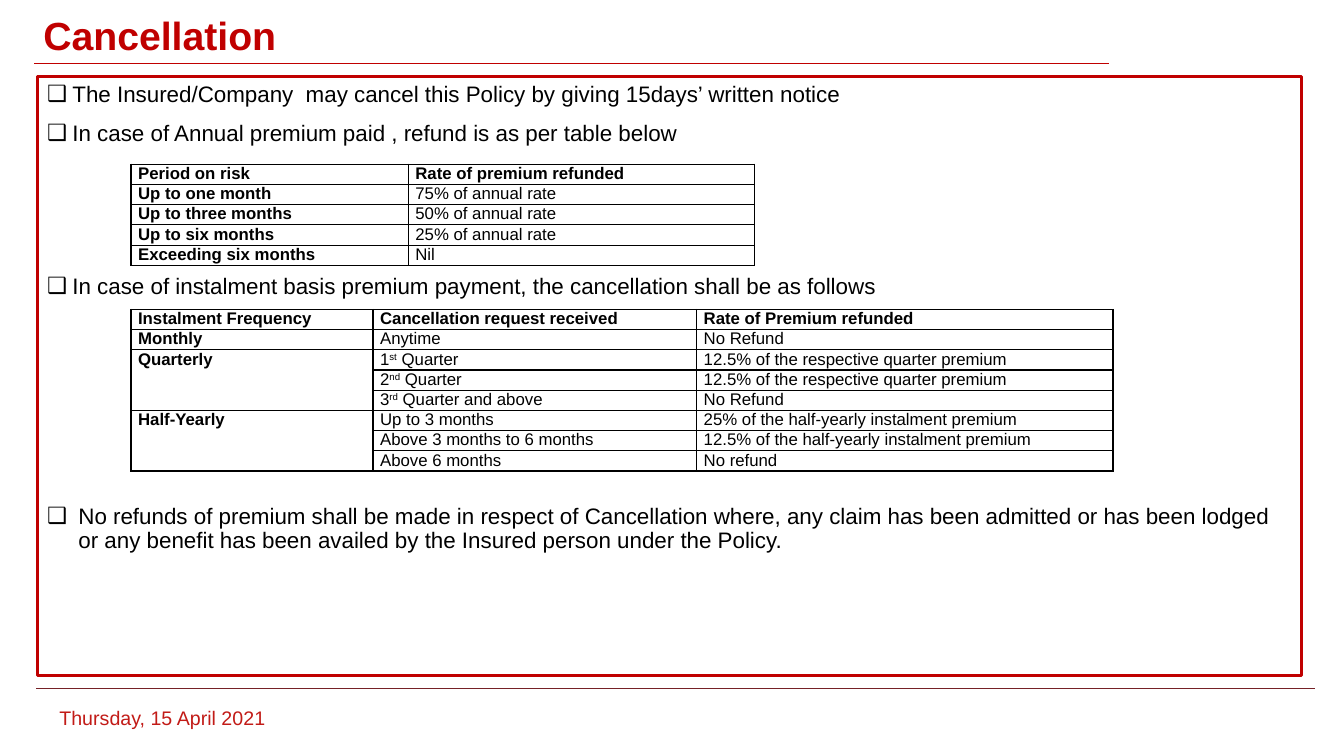
from lxml import etree
from pptx import Presentation
from pptx.dml.color import RGBColor
from pptx.enum import shapes, text
from pptx.oxml import ns
from pptx.util import Inches, Pt

RED = RGBColor(0xC0, 0x00, 0x00)
MAROON = RGBColor(0x75, 0x21, 0x27)
DATE = RGBColor(0xC2, 0x1B, 0x17)
BLACK = RGBColor(0, 0, 0)


def add_run(para, words, size, color=BLACK, bold=False):
    run = para.add_run()
    run.text = words
    run.font.name = "Arial"
    run.font.size = Pt(size)
    run.font.bold = bold
    run.font.color.rgb = color
    return run


def add_grid(slide, top, widths, rows):
    """Draw a bordered table; a None cell joins the cell above it."""
    high = Inches(0.19)
    grid = slide.shapes.add_table(
        len(rows), len(widths), Inches(1.3), Inches(top),
        Inches(sum(widths)), high * len(rows)).table
    for col, width in zip(grid.columns, widths):
        col.width = Inches(width)
    for r, row in enumerate(rows):
        grid.rows[r].height = high
        for c, words in enumerate(row):
            cell = grid.cell(r, c)
            cell.margin_left = cell.margin_right = Inches(0.07)
            cell.margin_top = cell.margin_bottom = 0
            para = cell.text_frame.paragraphs[0]
            para.font.size = Pt(12)
            # Carets set off a raised ordinal ending
            for i, part in enumerate((words or "").split("^")):
                if part:
                    run = add_run(para, part, 12, bold=r == 0 or c == 0)
                    if i == 1:
                        run._r.get_or_add_rPr().set("baseline", "30000")
            props = cell._tc.get_or_add_tcPr()
            for side in ("lnL", "lnR", "lnT", "lnB"):
                edge = etree.SubElement(props, ns.qn("a:" + side), w="12700")
                fill = etree.SubElement(edge, ns.qn("a:solidFill"))
                etree.SubElement(fill, ns.qn("a:srgbClr"), val=str(BLACK))
            cell.fill.background()
    # Join each label with the empty cells under it
    start = 0
    for r in range(1, len(rows) + 1):
        if r == len(rows) or rows[r][0] is not None:
            if r - start > 1:
                grid.cell(start, 0).merge(grid.cell(r - 1, 0))
            start = r


deck = Presentation()
deck.slide_width, deck.slide_height = Inches(13.33), Inches(7.5)
slide = deck.slides.add_slide(deck.slide_layouts[5])

# Title
title = slide.shapes.title
title.left, title.top = Inches(0.33), Inches(0.11)
title.width, title.height = Inches(11.5), Inches(0.66)
title.text_frame.vertical_anchor = text.MSO_ANCHOR.TOP
para = title.text_frame.paragraphs[0]
para.alignment = text.PP_ALIGN.LEFT
para.line_spacing = 0.9
add_run(para, "Cancellation", 28, RED, True)

# Rules under the title and above the date
for left, right, y, color in [(0.34, 11, 0.63, RED), (0.36, 13.04, 6.83, MAROON)]:
    rule = slide.shapes.add_connector(
        shapes.MSO_CONNECTOR.STRAIGHT,
        Inches(left), Inches(y), Inches(right), Inches(y))
    rule.line.color.rgb = color
    rule.line.width = Pt(0.5)
    etree.SubElement(rule._element.spPr, ns.qn("a:effectLst"))

# Date
date = slide.shapes.add_textbox(Inches(0.49), Inches(6.95), Inches(3.62), Inches(0.34))
date.text_frame.word_wrap = True
add_run(date.text_frame.paragraphs[0], "Thursday, 15 April 2021", 14, DATE)

# Bulleted terms: space before, indent, wording
terms = [
    (0, 0.25, "The Insured/Company  may cancel this Policy by giving 15days’ written notice"),
    (10, 0.25, "In case of Annual premium paid , refund is as per table below"),
    (92.5, 0.25, "In case of instalment basis premium payment, the cancellation shall be as follows"),
    (147, 0.31, "No refunds of premium shall be made in respect of Cancellation where, any claim "
     "has been admitted or has been lodged or any benefit has been availed by the "
     "Insured person under the Policy."),
]
body = slide.shapes.add_textbox(Inches(0.37), Inches(0.78), Inches(12.54), Inches(5.93))
frame = body.text_frame
frame.word_wrap = True
for i, (gap, indent, words) in enumerate(terms):
    para = frame.add_paragraph() if i else frame.paragraphs[0]
    props = para._p.get_or_add_pPr()
    props.set("marL", str(Inches(indent)))
    props.set("indent", str(-Inches(indent)))
    etree.SubElement(props, ns.qn("a:buFont"), typeface="Arial")
    etree.SubElement(props, ns.qn("a:buChar"), char="❑")
    para.line_spacing = 0.9
    para.space_before = Pt(gap)
    add_run(para, words, 16)

# Frame around the terms
box = slide.shapes.add_shape(
    shapes.MSO_SHAPE.RECTANGLE, Inches(0.37), Inches(0.76), Inches(12.54), Inches(5.94))
box.shadow.inherit = False
box.fill.background()
box.line.color.rgb = RED
box.line.width = Pt(1.75)

# Annual premium refunds
add_grid(slide, 1.63, [2.75, 3.43], [
    ("Period on risk", "Rate of premium refunded"),
    ("Up to one month", "75% of annual rate"),
    ("Up to three months", "50% of annual rate"),
    ("Up to six months", "25% of annual rate"),
    ("Exceeding six months", "Nil"),
])

# Instalment premium refunds
add_grid(slide, 3.07, [2.4, 3.21, 4.13], [
    ("Instalment Frequency", "Cancellation request received", "Rate of Premium refunded"),
    ("Monthly", "Anytime", "No Refund"),
    ("Quarterly", "1^st^ Quarter", "12.5% of the respective quarter premium"),
    (None, "2^nd^ Quarter", "12.5% of the respective quarter premium"),
    (None, "3^rd^ Quarter and above", "No Refund"),
    ("Half-Yearly", "Up to 3 months", "25% of the half-yearly instalment premium"),
    (None, "Above 3 months to 6 months", "12.5% of the half-yearly instalment premium"),
    (None, "Above 6 months", "No refund"),
])

deck.save("out.pptx")
